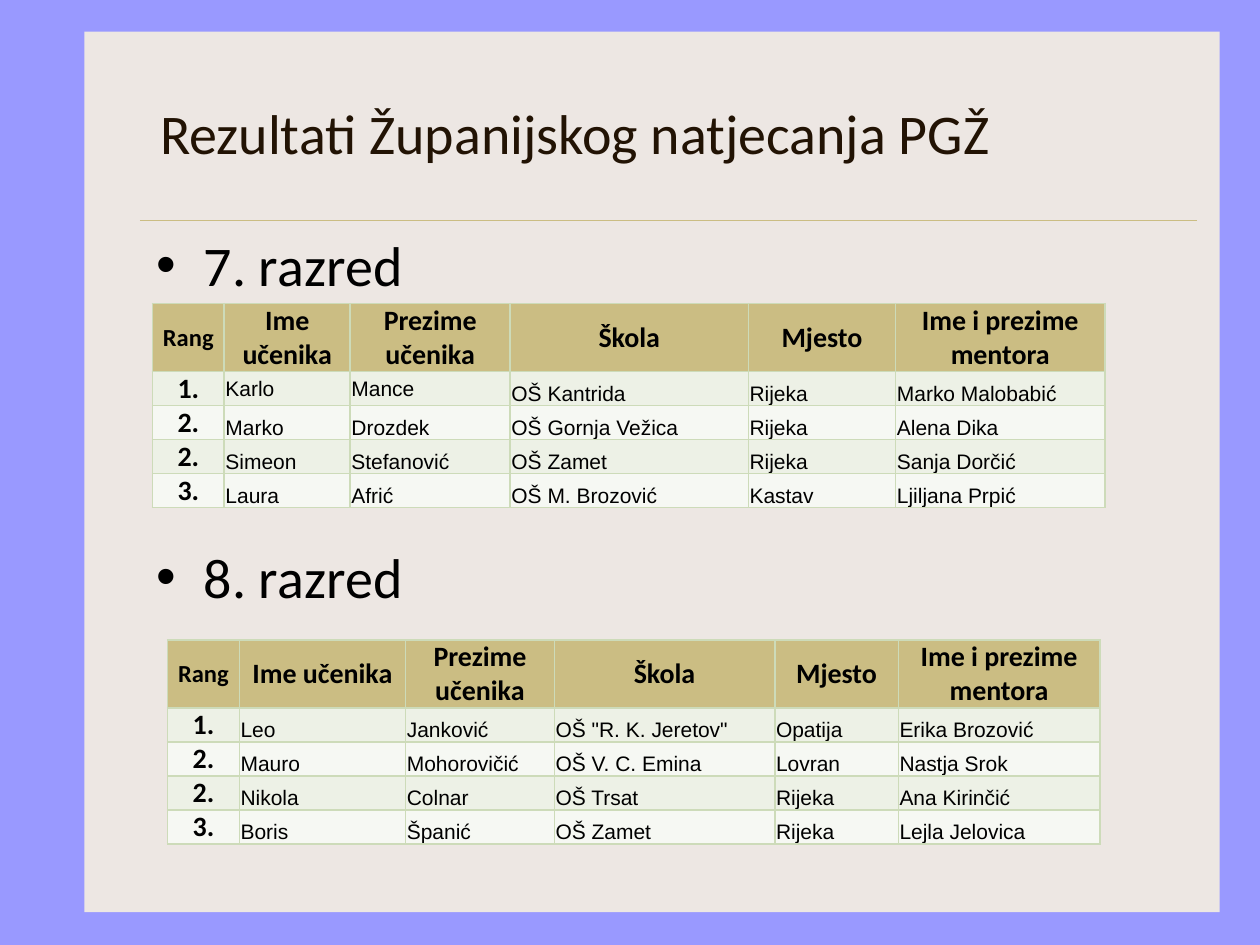
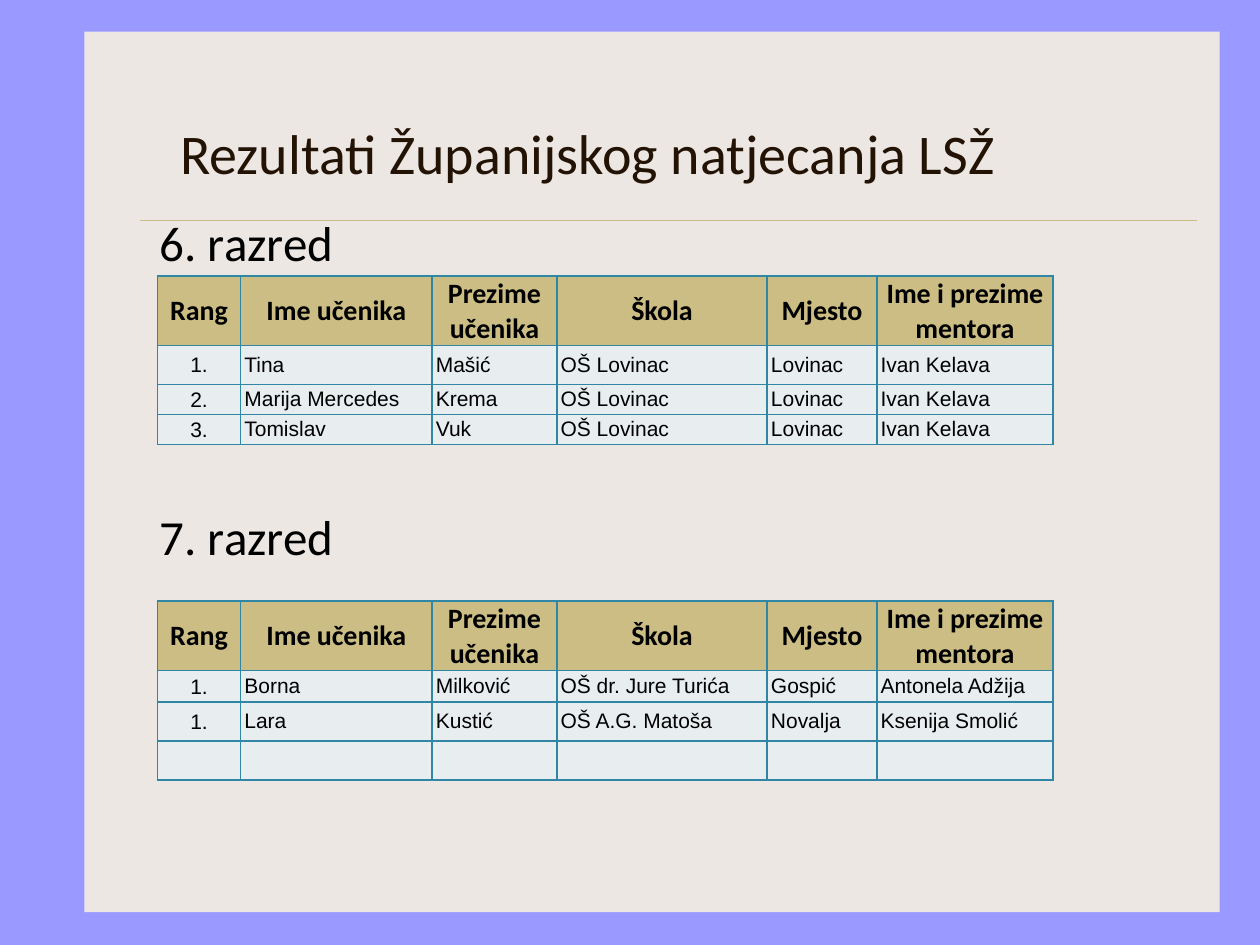
import pptx
import pptx.util
import pptx.dml.color
import pptx.enum.shapes
import pptx.enum.text
import pptx.oxml
import pptx.oxml.ns
from lxml import etree

Inches, Pt = pptx.util.Inches, pptx.util.Pt
ALIGN = pptx.enum.text.PP_ALIGN
ANCHOR = pptx.enum.text.MSO_ANCHOR

# Shared look
BACK, PANEL, GOLD = "9999FF", "EDE7E3", "CBBD83"
BROWN, BLACK = "221304", "000000"
BODY = dict(name="Arial", size=Pt(12), bold=False)
BOLD = dict(name="Calibri", size=Pt(16), bold=True)
HEADS = ("Rang", "Ime učenika", "Prezime učenika", "Škola", "Mjesto",
         "Ime i prezime mentora")
THIN = (0.01, 0.01, 0.01, 0)
WIDE = (0.07, 0, 0.07, 0)

# Table styles; insets are left, top, right, bottom
GREEN = dict(edge="CDDBB9", fills=("EDF1E6", "F6F8F3"), first=14, rank=BOLD,
             head_in=WIDE, rank_in=WIDE, body_in=THIN, anchor=ANCHOR.BOTTOM)
BLUE = dict(edge="3086A5", fills=("E8EDF0",), first=16, rank=BODY,
            head_in=THIN, rank_in=THIN, body_in=(0.03, 0, 0.03, 0),
            anchor=ANCHOR.MIDDLE)
GREEN_ROWS = (0.54, 0.27, 0.27, 0.27, 0.27)
BLUE_COLS = (0.66, 1.52, 0.99, 1.67, 0.87, 1.4)

# Results
PGZ7 = (("1.", "Karlo", "Mance", "OŠ Kantrida", "Rijeka", "Marko Malobabić"),
        ("2.", "Marko", "Drozdek", "OŠ Gornja Vežica", "Rijeka", "Alena Dika"),
        ("2.", "Simeon", "Stefanović", "OŠ Zamet", "Rijeka", "Sanja Dorčić"),
        ("3.", "Laura", "Afrić", "OŠ M. Brozović", "Kastav", "Ljiljana Prpić"))
PGZ8 = (("1.", "Leo", "Janković", 'OŠ "R. K. Jeretov"', "Opatija",
         "Erika Brozović"),
        ("2.", "Mauro", "Mohorovičić", "OŠ V. C. Emina", "Lovran",
         "Nastja Srok"),
        ("2.", "Nikola", "Colnar", "OŠ Trsat", "Rijeka", "Ana Kirinčić"),
        ("3.", "Boris", "Španić", "OŠ Zamet", "Rijeka", "Lejla Jelovica"))
LSZ6 = tuple((rank, name, last, "OŠ Lovinac", "Lovinac", "Ivan Kelava")
             for rank, name, last in (("1.", "Tina", "Mašić"),
                                      ("2.", "Marija Mercedes", "Krema"),
                                      ("3.", "Tomislav", "Vuk")))
LSZ7 = (("1.", "Borna", "Milković", "OŠ dr. Jure Turića", "Gospić",
         "Antonela Adžija"),
        ("1.", "Lara", "Kustić", "OŠ A.G. Matoša", "Novalja",
         "Ksenija Smolić"),
        ("",) * 6)


def paint(color, code):
    color.rgb = pptx.dml.color.RGBColor.from_string(code)


def fill(item, code):
    item.fill.solid()
    paint(item.fill.fore_color, code)


def style(font, code, look):
    for key, value in look.items():
        setattr(font, key, value)
    paint(font.color, code)


def add_slide(deck, title, left, top):
    slide = deck.slides.add_slide(deck.slide_layouts[5])
    # Panel and rule
    panel = slide.shapes.add_shape(
        pptx.enum.shapes.MSO_SHAPE.RECTANGLE,
        Inches(0.67), Inches(0.25), Inches(9.01), Inches(6.99))
    panel.shadow.inherit = False
    fill(panel, PANEL)
    panel.line.fill.background()
    rule = slide.shapes.add_connector(
        pptx.enum.shapes.MSO_CONNECTOR.STRAIGHT,
        Inches(1.11), Inches(1.75), Inches(9.5), Inches(1.75))
    rule.line.width = Pt(0.25)
    paint(rule.line.color, GOLD)
    etree.SubElement(rule._element.spPr, pptx.oxml.ns.qn("a:effectLst"))
    # Title, brought in front of the panel
    head = slide.shapes.title
    slide.shapes._spTree.append(head._element)
    head.left, head.top = Inches(left), Inches(top)
    head.width, head.height = Inches(8.33), Inches(1.25)
    frame = head.text_frame
    frame.text = title
    frame.vertical_anchor = ANCHOR.MIDDLE
    para = frame.paragraphs[0]
    para.alignment = ALIGN.LEFT
    style(para.runs[0].font, BROWN, dict(name="Calibri", size=Pt(32)))
    return slide


def add_bullet(para):
    props = para._p.get_or_add_pPr()
    props.set("marL", str(Inches(0.38)))
    props.set("indent", str(-Inches(0.38)))
    for tag, key, value in (("buFont", "typeface", "Arial"),
                            ("buChar", "char", "•")):
        etree.SubElement(props, pptx.oxml.ns.qn("a:" + tag)).set(key, value)


def add_grades(slide, grades, left, top, height, size, gap, bullet=False):
    box = slide.shapes.add_textbox(Inches(left), Inches(top),
                                   Inches(8.33), Inches(height))
    frame = box.text_frame
    frame.word_wrap = True
    for i, grade in enumerate(grades):
        para = frame.add_paragraph() if i else frame.paragraphs[0]
        if i:
            para.space_before = Pt(gap)
        if bullet:
            add_bullet(para)
        run = para.add_run()
        run.text = grade
        style(run.font, BLACK, dict(name="Calibri", size=Pt(size)))


def add_edges(cell, code):
    props = cell._tc.get_or_add_tcPr()
    for side in "LRTB":
        props.append(pptx.oxml.parse_xml(
            f'<a:ln{side} {pptx.oxml.ns.nsdecls("a")} w="12700"><a:solidFill>'
            f'<a:srgbClr val="{code}"/></a:solidFill></a:ln{side}>'))


def set_cell(cell, text, look, code, edge, inset, anchor, align):
    add_edges(cell, edge)
    fill(cell, code)
    sides = ("left", "top", "right", "bottom")
    for side, value in zip(sides, inset):
        setattr(cell, "margin_" + side, Inches(value))
    cell.vertical_anchor = anchor
    para = cell.text_frame.paragraphs[0]
    para.alignment = align
    if text:
        run = para.add_run()
        run.text = text
        style(run.font, BLACK, look)


def add_table(slide, left, top, cols, rows, data, kind, middle=()):
    table = slide.shapes.add_table(
        len(rows), len(cols), Inches(left), Inches(top),
        Inches(sum(cols)), Inches(sum(rows))).table
    table.first_row = table.horz_banding = False
    for col, width in zip(table.columns, cols):
        col.width = Inches(width)
    for row, height in zip(table.rows, rows):
        row.height = Inches(height)
    edge, fills = kind["edge"], kind["fills"]
    # Header
    for c, text in enumerate(HEADS):
        look = BOLD if c else dict(BOLD, size=Pt(kind["first"]))
        set_cell(table.cell(0, c), text, look, GOLD, edge, kind["head_in"],
                 ANCHOR.MIDDLE, ALIGN.CENTER)
    # Ranks and pupils
    for r, line in enumerate(data, 1):
        code = fills[(r - 1) % len(fills)]
        for c, text in enumerate(line):
            look = BODY if c else kind["rank"]
            inset = kind["body_in" if c else "rank_in"]
            anchor = ANCHOR.MIDDLE if (r, c) in middle else kind["anchor"]
            set_cell(table.cell(r, c), text, look, code, edge, inset, anchor,
                     ALIGN.LEFT if c else ALIGN.CENTER)


def main():
    deck = pptx.Presentation()
    deck.slide_width, deck.slide_height = Inches(10), Inches(7.5)
    fill(deck.slide_master.background, BACK)

    # Slide 1: PGŽ
    slide = add_slide(deck, "Rezultati Županijskog natjecanja PGŽ", 1.17, 0.42)
    add_grades(slide, ("7. razred", "8. razred"), 1.14, 1.78, 4.5, 32, 140,
               bullet=True)
    add_table(slide, 1.33, 5.08, (0.57, 1.32, 1.18, 1.75, 0.98, 1.6),
              GREEN_ROWS, PGZ8, GREEN)
    add_table(slide, 1.21, 2.41, (0.57, 1, 1.27, 1.89, 1.17, 1.66),
              GREEN_ROWS, PGZ7, GREEN, middle=((1, 1), (1, 2)))

    # Slide 2: LSŽ
    slide = add_slide(deck, "Rezultati Županijskog natjecanja LSŽ", 1.33, 0.58)
    add_grades(slide, ("6. razred", "7. razred"), 1.17, 1.64, 4.78, 28, 134)
    add_table(slide, 1.25, 2.19, BLUE_COLS, (0.55, 0.31, 0.24, 0.24),
              LSZ6, BLUE)
    add_table(slide, 1.25, 4.77, BLUE_COLS, (0.55, 0.25, 0.31, 0.3),
              LSZ7, BLUE)

    deck.save("out.pptx")


if __name__ == "__main__":
    main()
